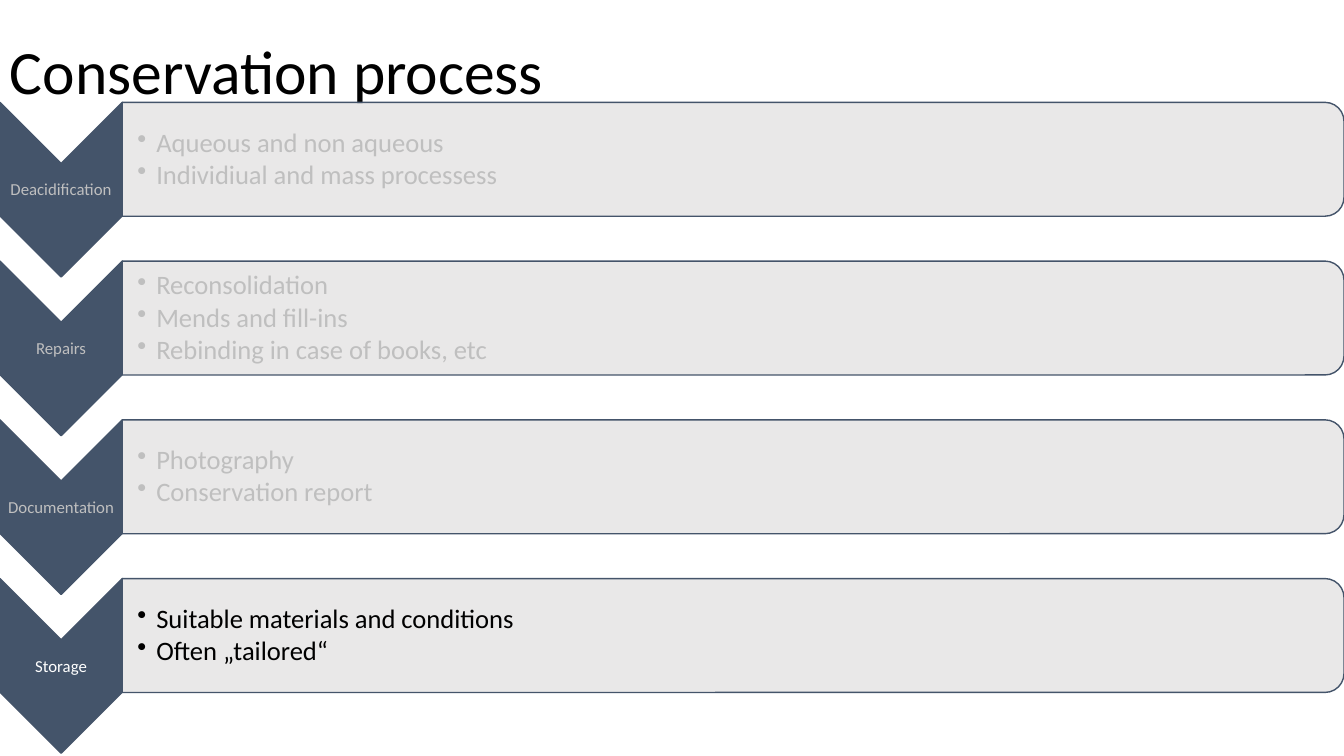
"""Build the slide that lists the four steps of the conservation process."""
from dataclasses import dataclass

from lxml.etree import SubElement
from pptx import Presentation
from pptx.dml.color import RGBColor
from pptx.enum.shapes import MSO_SHAPE
from pptx.enum.text import MSO_ANCHOR, PP_ALIGN
from pptx.oxml.ns import qn
from pptx.shapes.autoshape import Shape
from pptx.slide import Slide
from pptx.util import Cm, Pt


@dataclass(frozen=True)
class Theme:
    """Colours and type sizes of the slide."""
    font: str = "Calibri"
    accent: str = "44546A"
    panel: str = "E7E6E6"
    ink: str = "000000"
    light: str = "FFFFFF"
    faded: str = "BFBFBF"
    title_size: float = 44
    label_size: float = 12
    bullet_size: float = 19


@dataclass(frozen=True)
class Area:
    """Unrotated bounds in centimetres."""
    left: float
    top: float
    width: float
    height: float


@dataclass(frozen=True)
class TextStyle:
    """Look of the paragraphs in a text box."""
    size: float
    color: str
    align: PP_ALIGN = PP_ALIGN.LEFT
    space_after: float = 0
    left_inset: float = 0.03
    inset: float = 0.03
    bulleted: bool = False


@dataclass(frozen=True)
class Step:
    """One step of the process with its details."""
    label: str
    details: tuple[str, ...]
    active: bool = False


THEME = Theme()
SLIDE_WIDTH, SLIDE_HEIGHT = 33.87, 19.05
FIRST_TOP, ROW_PITCH = 2.58, 4.0
CHEVRON_WIDTH, CHEVRON_HEIGHT = 3.08, 4.4
PANEL_HEIGHT = 2.87
BULLET_INDENT = 0.48

STEPS = (
    Step("Deacidification", ("Aqueous and non aqueous", "Individiual and mass processess")),
    Step("Repairs", ("Reconsolidation", "Mends and fill-ins", "Rebinding in case of books, etc")),
    Step("Documentation", ("Photography", "Conservation report")),
    Step("Storage", ("Suitable materials and conditions", "Often „tailored“"), active=True),
)


def add_turned_shape(page: Slide, kind: MSO_SHAPE, area: Area, fill: str) -> Shape:
    """Add a preset shape turned by 90 degrees that covers the given area."""
    left = area.left + (area.width - area.height) / 2
    top = area.top + (area.height - area.width) / 2
    shape = page.shapes.add_shape(kind, Cm(left), Cm(top), Cm(area.height), Cm(area.width))
    shape.rotation = 90
    shape.shadow.inherit = False
    shape.fill.solid()
    shape.fill.fore_color.rgb = RGBColor.from_string(fill)
    shape.line.color.rgb = RGBColor.from_string(THEME.accent)
    shape.line.width = Pt(1)
    return shape


def set_opacity(shape: Shape, percent: int) -> None:
    """Set the opacity of a solid fill."""
    color = shape.fill._xPr.find(qn("a:solidFill")).find(qn("a:srgbClr"))
    SubElement(color, qn("a:alpha"), val=str(percent * 1000))


def add_text(page: Slide, lines: tuple[str, ...], area: Area, style: TextStyle) -> None:
    """Add a vertically centred text box with one paragraph per line."""
    box = page.shapes.add_textbox(Cm(area.left), Cm(area.top), Cm(area.width), Cm(area.height))
    frame = box.text_frame
    frame.word_wrap = True
    frame.vertical_anchor = MSO_ANCHOR.MIDDLE
    frame.margin_left = Cm(style.left_inset)
    frame.margin_right = frame.margin_top = frame.margin_bottom = Cm(style.inset)
    frame.text = "\n".join(lines)
    for para in frame.paragraphs:
        para.alignment = style.align
        para.line_spacing = 0.9
        para.space_after = Pt(style.space_after)
        for span in para.runs:
            span.font.name = THEME.font
            span.font.size = Pt(style.size)
            span.font.color.rgb = RGBColor.from_string(style.color)
        if style.bulleted:
            properties = para._p.get_or_add_pPr()
            properties.set("marL", str(Cm(BULLET_INDENT)))
            properties.set("indent", str(-Cm(BULLET_INDENT)))
            SubElement(properties, qn("a:buChar"), char="•")


def add_step(page: Slide, step: Step, top: float) -> None:
    """Draw the chevron, label, panel and details of one step."""
    label_color = THEME.light if step.active else THEME.faded
    detail_color = THEME.ink if step.active else THEME.faded
    panel_width = SLIDE_WIDTH - CHEVRON_WIDTH

    add_turned_shape(page, MSO_SHAPE.CHEVRON,
                     Area(0, top, CHEVRON_WIDTH, CHEVRON_HEIGHT), THEME.accent)
    add_text(page, (step.label,), Area(0, top + 1.56, CHEVRON_WIDTH, 1.32),
             TextStyle(THEME.label_size, label_color, PP_ALIGN.CENTER, space_after=4.2))
    panel = add_turned_shape(page, MSO_SHAPE.ROUND_2_SAME_RECTANGLE,
                             Area(CHEVRON_WIDTH, top, panel_width, PANEL_HEIGHT), THEME.panel)
    set_opacity(panel, 90)
    add_text(page, step.details, Area(CHEVRON_WIDTH, top + 0.15, panel_width - 0.14, 2.59),
             TextStyle(THEME.bullet_size, detail_color, space_after=2.4,
                       left_inset=0.38, bulleted=True))


def main() -> None:
    """Create the deck and save it."""
    deck = Presentation()
    deck.slide_width, deck.slide_height = Cm(SLIDE_WIDTH), Cm(SLIDE_HEIGHT)
    page = deck.slides.add_slide(deck.slide_layouts[6])
    add_text(page, ("Conservation process",), Area(0, 0.05, 29.21, 3.68),
             TextStyle(THEME.title_size, THEME.ink, left_inset=0.25, inset=0.13))
    for index, step in enumerate(STEPS):
        add_step(page, step, FIRST_TOP + index * ROW_PITCH)
    deck.save("out.pptx")


if __name__ == "__main__":
    main()
